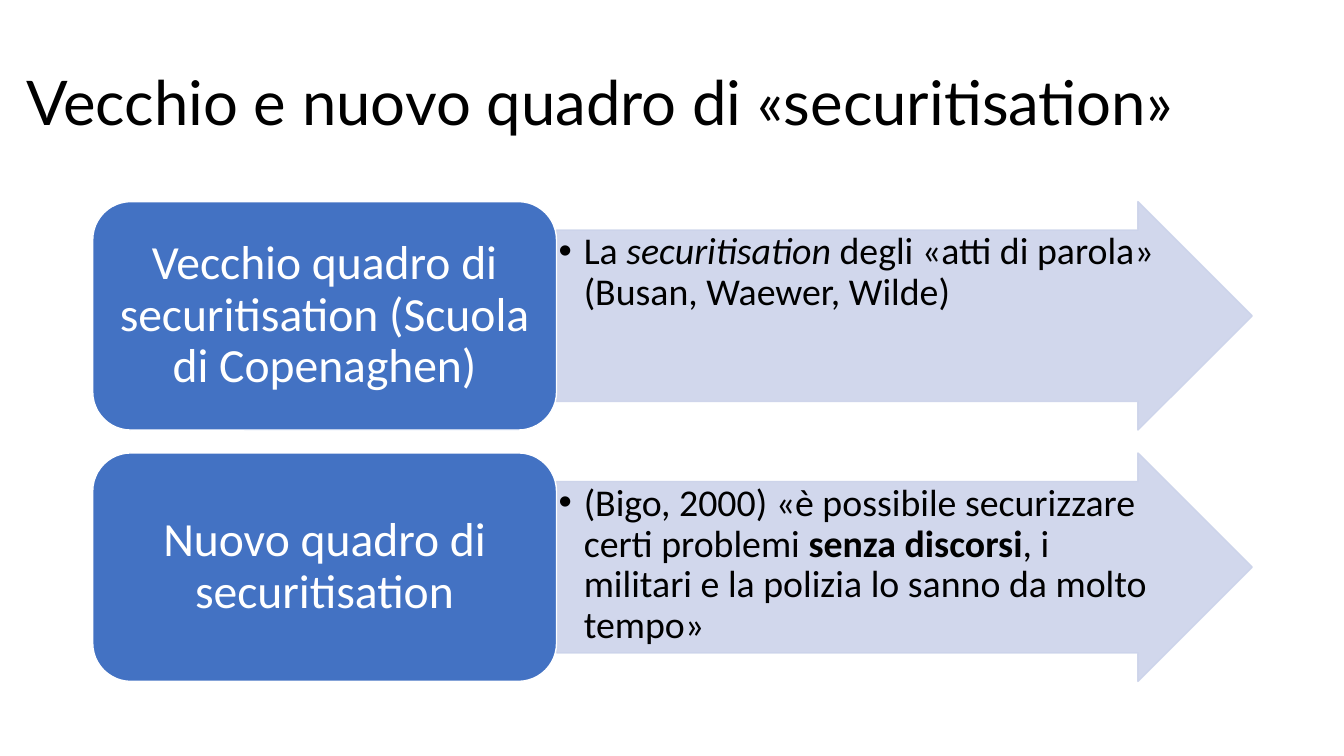
from pptx import Presentation
from pptx.dml.color import RGBColor
from pptx.enum.shapes import MSO_SHAPE
from pptx.enum.text import MSO_ANCHOR, MSO_AUTO_SIZE, PP_ALIGN
from pptx.oxml.ns import qn
from pptx.util import Inches, Pt
from lxml import etree

ARROW, ROUND = MSO_SHAPE.RIGHT_ARROW, MSO_SHAPE.ROUNDED_RECTANGLE
TOP, MIDDLE = MSO_ANCHOR.TOP, MSO_ANCHOR.MIDDLE
LEFT, CENTER = PP_ALIGN.LEFT, PP_ALIGN.CENTER
NO_FIT = MSO_AUTO_SIZE.NONE

COLORS = {"ink": "000000", "paper": "FFFFFF", "blue": "4372C3", "pale": "CCD3EA"}
WIDTH, HEIGHT = 13.33, 7.5
TITLE = "Vecchio e nuovo quadro di «securitisation»"
# Each row: label, then the runs of its bullet as (text, style)
ROWS = [
    ("Vecchio quadro di securitisation (Scuola di Copenaghen)",
     [("La ", ""), ("securitisation", "italic"),
      (" degli «atti di parola» (Busan, Waewer, Wilde)", "")]),
    ("Nuovo quadro di securitisation",
     [("(Bigo, 2000) «è possibile securizzare certi problemi ", ""),
      ("senza discorsi", "bold"),
      (", i militari e la polizia lo sanno da molto tempo»", "")]),
]


def color(name):
    return RGBColor.from_string(COLORS[name])


def style(run, face, size, ink):
    run.font.name = face
    run.font.size = Pt(size)
    run.font.color.rgb = color(ink)


def setup(frame, anchor, insets):
    """Set wrapping, anchor and left, top, right, bottom insets."""
    frame.word_wrap = True
    frame.auto_size = NO_FIT
    frame.vertical_anchor = anchor
    (frame.margin_left, frame.margin_top,
     frame.margin_right, frame.margin_bottom) = map(Inches, insets)


def fade(shape, share):
    """Make fill and line partly opaque."""
    for tint in shape._element.spPr.iter(qn("a:srgbClr")):
        etree.SubElement(tint, qn("a:alpha")).set("val", str(int(share * 100000)))


def add_form(parent, kind, box, fill, line):
    form = parent.shapes.add_shape(kind, *map(Inches, box))
    form.shadow.inherit = False
    form.fill.solid()
    form.fill.fore_color.rgb = color(fill)
    form.line.color.rgb = color(line)
    form.line.width = Pt(1)
    return form


def add_bullet(para, indent):
    props = para._p.get_or_add_pPr()
    props.set("marL", str(Inches(indent)))
    props.set("indent", str(-Inches(indent)))
    tint = etree.SubElement(props, qn("a:buClr"))
    etree.SubElement(tint, qn("a:srgbClr")).set("val", COLORS["ink"])
    etree.SubElement(props, qn("a:buFont")).set("typeface", "Arial")
    etree.SubElement(props, qn("a:buChar")).set("char", "•")


def add_arrow(parent, box):
    arrow = add_form(parent, ARROW, box, "pale", "pale")
    arrow.adjustments[0], arrow.adjustments[1] = 0.75, 0.5
    fade(arrow, 0.9)


def add_quote(parent, box, parts):
    """Write the bullet over the arrow's shaft and part of its head."""
    left, top, width, height = box
    area = (left, top + height / 8, width - height * 3 / 8, height * 3 / 4)
    quote = parent.shapes.add_textbox(*map(Inches, area))
    setup(quote.text_frame, TOP, (0.02, 0.02, 0.02, 0.02))
    para = quote.text_frame.paragraphs[0]
    para.alignment = LEFT
    para.line_spacing = 0.9
    add_bullet(para, 0.25)
    for text, look in parts:
        run = para.add_run()
        run.text = text
        style(run, "Calibri", 27, "ink")
        run.font.italic = look == "italic"
        run.font.bold = look == "bold"


def add_label(parent, box, text):
    label = add_form(parent, ROUND, box, "blue", "paper")
    label.adjustments[0] = 0.167
    setup(label.text_frame, MIDDLE, (0.14, 0.07, 0.14, 0.07))
    label.text_frame.text = text
    para = label.text_frame.paragraphs[0]
    para.alignment = CENTER
    para.line_spacing = 0.9
    style(para.runs[0], "Calibri", 34, "paper")


def add_rows(slide, box):
    """Stack the rows: labels take 40% of the width, gaps 10% of a row."""
    left, top, width, height = box
    tall = height / (len(ROWS) + 0.1 * (len(ROWS) - 1))
    split = 0.4 * width
    group = slide.shapes.add_group_shape()
    for i, (label, parts) in enumerate(ROWS):
        y = top + i * 1.1 * tall
        right = (left + split, y, width - split, tall)
        add_arrow(group, right)
        add_quote(group, right, parts)
        add_label(group, (left, y, split, tall), label)


def add_title(slide, box):
    title = slide.shapes.title
    title.left, title.top, title.width, title.height = map(Inches, box)
    setup(title.text_frame, MIDDLE, (0.1, 0.05, 0.1, 0.05))
    title.text_frame.text = TITLE
    para = title.text_frame.paragraphs[0]
    para.alignment = LEFT
    para.line_spacing = 0.9
    style(para.runs[0], "Lato", 44, "ink")


def main():
    deck = Presentation()
    deck.slide_width, deck.slide_height = Inches(WIDTH), Inches(HEIGHT)
    slide = deck.slides.add_slide(deck.slide_layouts.get_by_name("Title Only"))
    add_title(slide, (0.16, 0.32, 12.85, 1.45))
    add_rows(slide, (0.92, 2, 11.5, 4.76))
    deck.save("out.pptx")


if __name__ == "__main__":
    main()
